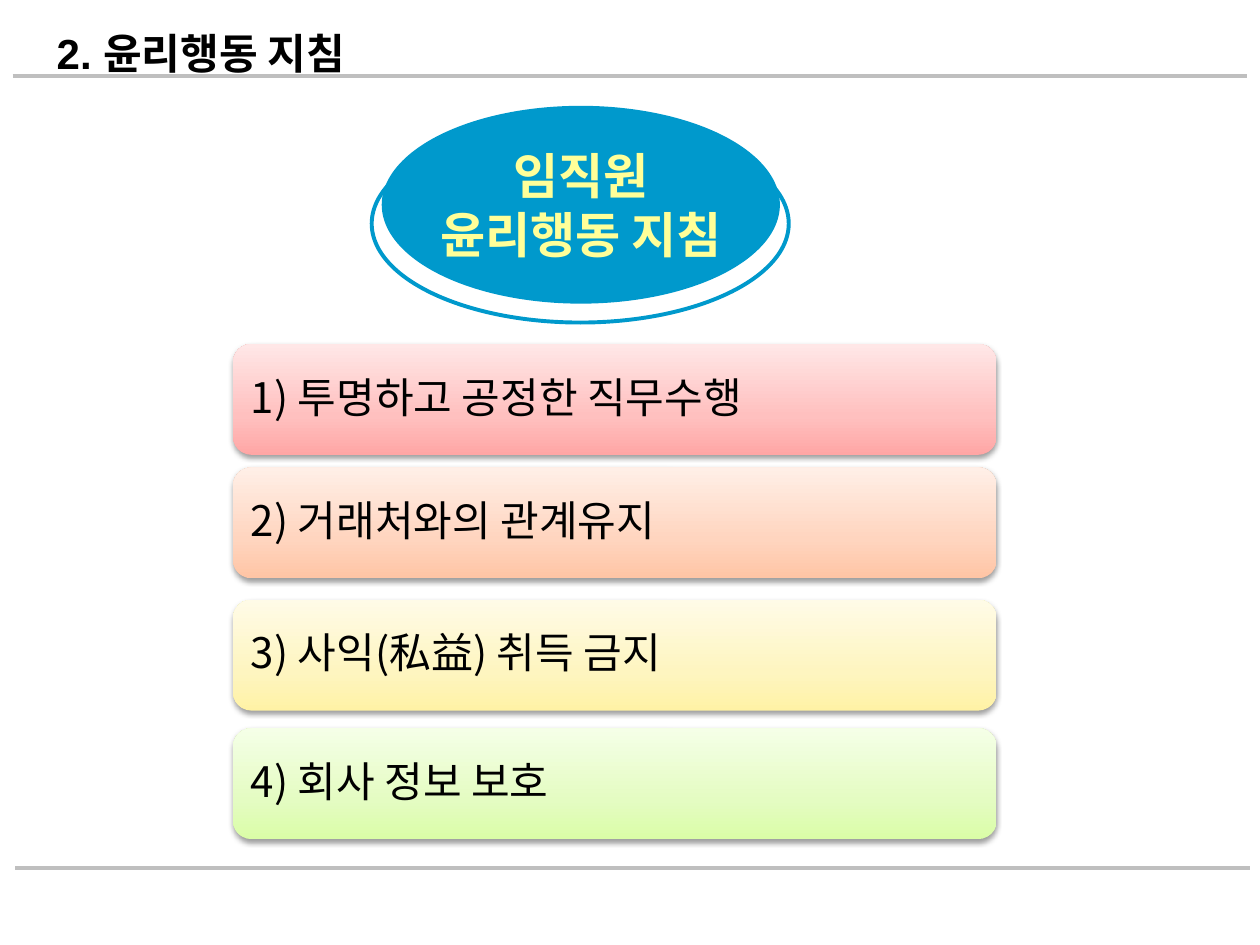
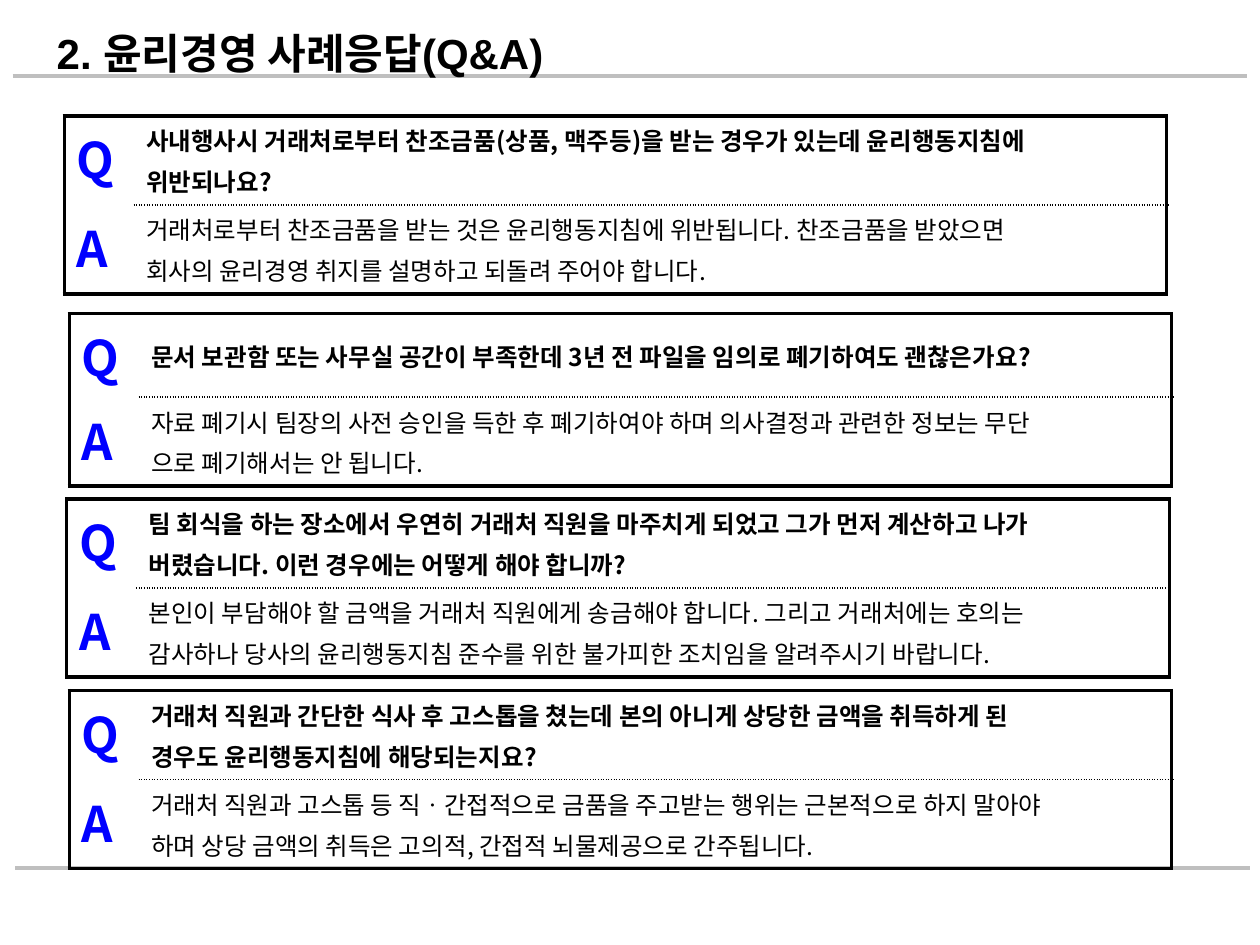
from dataclasses import dataclass

from lxml.etree import SubElement
from pptx import Presentation
from pptx.dml.color import RGBColor
from pptx.enum.shapes import MSO_CONNECTOR, MSO_SHAPE as Preset
from pptx.enum.text import MSO_ANCHOR as Anchor, MSO_AUTO_SIZE, PP_ALIGN as Align
from pptx.oxml.ns import qn
from pptx.util import Inches, Pt

BLACK = RGBColor(0x00, 0x00, 0x00)
RULE_GRAY = RGBColor(0xBF, 0xBF, 0xBF)
OVAL_BLUE = RGBColor(0x00, 0x99, 0xCC)
OVAL_YELLOW = RGBColor(0xFF, 0xFF, 0x99)
LETTER_BLUE = RGBColor(0x00, 0x00, 0xFF)
REDS = (RGBColor(0xFF, 0xA6, 0xA5), RGBColor(0xFF, 0xC0, 0xBF), RGBColor(0xFF, 0xE7, 0xE7))
ORANGES = (RGBColor(0xFF, 0xC5, 0xA5), RGBColor(0xFF, 0xD5, 0xBF), RGBColor(0xFF, 0xEF, 0xE7))
YELLOWS = (RGBColor(0xFF, 0xF2, 0xA5), RGBColor(0xFE, 0xF5, 0xC0), RGBColor(0xFF, 0xFB, 0xE7))
GREENS = (RGBColor(0xDA, 0xFD, 0xA7), RGBColor(0xE4, 0xFC, 0xC2), RGBColor(0xF5, 0xFF, 0xE7))

TITLE_FONT = "Arial"
KOREAN_FONT = "Noto Sans CJK KR"
SOLID = (2.25, "solid")
DOTTED = (1, "sysDot")


@dataclass
class Guideline:
    top: float
    text: str
    shades: tuple[RGBColor, RGBColor, RGBColor]


@dataclass
class CaseStudy:
    left: float
    top: float
    question: str
    answer: str
    answer_height: float = 0.58


GUIDELINES = [
    Guideline(2.73, "1) 투명하고 공정한 직무수행", REDS),
    Guideline(3.71, "2) 거래처와의 관계유지", ORANGES),
    Guideline(4.76, "3) 사익(私益) 취득 금지", YELLOWS),
    Guideline(5.78, "4) 회사 정보 보호", GREENS),
]

CASES = [
    CaseStudy(
        0.51, 0.92,
        "사내행사시 거래처로부터 찬조금품(상품, 맥주등)을 받는 경우가 있는데 윤리행동지침에\n위반되나요?",
        "거래처로부터 찬조금품을 받는 것은 윤리행동지침에 위반됩니다. 찬조금품을 받았으면\n"
        "회사의 윤리경영 취지를 설명하고 되돌려 주어야 합니다.",
    ),
    CaseStudy(
        0.55, 2.49,
        "문서 보관함 또는 사무실 공간이 부족한데 3년 전 파일을 임의로 폐기하여도 괜찮은가요?",
        "자료 폐기시 팀장의 사전 승인을 득한 후 폐기하여야 하며 의사결정과 관련한 정보는 무단\n"
        "으로 폐기해서는 안 됩니다.",
        0.6,
    ),
    CaseStudy(
        0.53, 3.96,
        "팀 회식을 하는 장소에서 우연히 거래처 직원을 마주치게 되었고 그가 먼저 계산하고 나가\n"
        "버렸습니다. 이런 경우에는 어떻게 해야 합니까?",
        "본인이 부담해야 할 금액을 거래처 직원에게 송금해야 합니다. 그리고 거래처에는 호의는\n"
        "감사하나 당사의 윤리행동지침 준수를 위한 불가피한 조치임을 알려주시기 바랍니다.",
    ),
    CaseStudy(
        0.55, 5.48,
        "거래처 직원과 간단한 식사 후 고스톱을 쳤는데 본의 아니게 상당한 금액을 취득하게 된\n"
        "경우도 윤리행동지침에 해당되는지요?",
        "거래처 직원과 고스톱 등 직ㆍ간접적으로 금품을 주고받는 행위는 근본적으로 하지 말아야\n"
        "하며 상당 금액의 취득은 고의적, 간접적 뇌물제공으로 간주됩니다.",
    ),
]


def style_paragraphs(frame, size: float, color: RGBColor, bold: bool = False,
                     name: str = KOREAN_FONT, align=Align.LEFT) -> None:
    for paragraph in frame.paragraphs:
        paragraph.alignment = align
        font = paragraph.font
        font.size, font.bold, font.name = Pt(size), bold, name
        font.color.rgb = color
        east_asian = SubElement(font._element, qn("a:ea"))
        east_asian.set("typeface", KOREAN_FONT)


def add_color(parent, color: RGBColor):
    node = SubElement(parent, qn("a:srgbClr"))
    node.set("val", str(color))
    return node


def add_rule(slide, left: float, top: float) -> None:
    rule = slide.shapes.add_connector(
        MSO_CONNECTOR.STRAIGHT, Inches(left), Inches(top), Inches(left + 9.8), Inches(top))
    rule.line.color.rgb = RULE_GRAY
    rule.line.width = Pt(2.25)
    SubElement(rule._element.spPr, qn("a:effectLst"))


def add_titled_slide(prs, heading: str):
    slide = prs.slides.add_slide(prs.slide_layouts[5])
    add_rule(slide, 0.1, 0.6)
    add_rule(slide, 0.12, 6.89)
    title = slide.shapes.title
    slide.shapes._spTree.append(title._element)
    title.left, title.top, title.width, title.height = map(Inches, (0.35, 0.13, 9.41, 0.55))
    frame = title.text_frame
    frame.text = heading
    frame.auto_size = MSO_AUTO_SIZE.NONE
    frame.vertical_anchor = Anchor.TOP
    frame.paragraphs[0].line_spacing = 1.1
    style_paragraphs(frame, 24, BLACK, True, TITLE_FONT)
    return slide


def add_shape(slide, preset, left: float, top: float, width: float, height: float):
    shape = slide.shapes.add_shape(
        preset, Inches(left), Inches(top), Inches(width), Inches(height))
    shape.shadow.inherit = False
    shape.fill.background()
    shape.line.fill.background()
    return shape


def shade_upward(shape, shades: tuple[RGBColor, ...]) -> None:
    shape.fill.gradient()
    shape.fill.gradient_angle = 90
    stops = shape._element.spPr.find(f"{qn('a:gradFill')}/{qn('a:gsLst')}")
    for stop in list(stops):
        stops.remove(stop)
    for position, shade in zip((0, 35, 100), shades):
        stop = SubElement(stops, qn("a:gs"))
        stop.set("pos", str(position * 1000))
        add_color(stop, shade)


def cast_shadow(shape) -> None:
    effects = shape._element.spPr.find(qn("a:effectLst"))
    shadow = SubElement(effects, qn("a:outerShdw"))
    shadow.set("blurRad", str(Pt(3.1)))
    shadow.set("dist", str(Pt(1.6)))
    shadow.set("dir", "5400000")
    shadow.set("rotWithShape", "0")
    alpha = SubElement(add_color(shadow, BLACK), qn("a:alpha"))
    alpha.set("val", "38000")


def add_guideline(slide, guideline: Guideline) -> None:
    bar = add_shape(slide, Preset.ROUNDED_RECTANGLE, 1.85, guideline.top, 6.06, 0.88)
    shade_upward(bar, guideline.shades)
    cast_shadow(bar)
    frame = bar.text_frame
    frame.text = guideline.text
    frame.word_wrap = True
    frame.vertical_anchor = Anchor.MIDDLE
    frame.paragraphs[0].line_spacing = 0.9
    style_paragraphs(frame, 24, BLACK)


def add_heading_oval(slide) -> None:
    ring = add_shape(slide, Preset.OVAL, 2.95, 0.99, 3.31, 1.57)
    ring.line.color.rgb = OVAL_BLUE
    ring.line.width = Pt(2.25)
    oval = add_shape(slide, Preset.OVAL, 3.03, 0.84, 3.16, 1.57)
    oval.fill.solid()
    oval.fill.fore_color.rgb = OVAL_BLUE
    frame = oval.text_frame
    frame.text = "임직원\n윤리행동 지침"
    frame.word_wrap = False
    frame.vertical_anchor = Anchor.MIDDLE
    style_paragraphs(frame, 28, OVAL_YELLOW, True, align=Align.CENTER)


def set_borders(cell, **edges: tuple[float, str]) -> None:
    properties = cell._tc.get_or_add_tcPr()
    for edge in "LRTB":
        border = SubElement(properties, qn(f"a:ln{edge}"))
        if edge not in edges:
            SubElement(border, qn("a:noFill"))
            continue
        width, dash = edges[edge]
        border.set("w", str(Pt(width)))
        add_color(SubElement(border, qn("a:solidFill")), BLACK)
        SubElement(border, qn("a:prstDash")).set("val", dash)
    cell.fill.background()


def fill_case_row(table, row: int, letter: str, text: str) -> None:
    letter_cell, text_cell = table.cell(row, 0), table.cell(row, 1)
    is_question = row == 0
    if is_question:
        set_borders(letter_cell, L=SOLID, T=SOLID)
        set_borders(text_cell, T=SOLID, R=SOLID, B=DOTTED)
    else:
        set_borders(letter_cell, L=SOLID, B=SOLID)
        set_borders(text_cell, T=DOTTED, R=SOLID, B=SOLID)
    letter_cell.text_frame.text = letter
    style_paragraphs(letter_cell.text_frame, 28, LETTER_BLUE, True)
    text_cell.text_frame.text = text
    text_cell.vertical_anchor = Anchor.MIDDLE
    for paragraph in text_cell.text_frame.paragraphs[1:]:
        paragraph.space_before = Pt(2.8)
    style_paragraphs(text_cell.text_frame, 14, BLACK, is_question)


def add_case(slide, case: CaseStudy) -> None:
    question_height = 0.58
    table = slide.shapes.add_table(
        2, 2, Inches(case.left), Inches(case.top), Inches(8.75),
        Inches(question_height + case.answer_height)).table
    table.first_row = table.horz_banding = False
    for column, width in zip(table.columns, (0.55, 8.2)):
        column.width = Inches(width)
    for row, height in zip(table.rows, (question_height, case.answer_height)):
        row.height = Inches(height)
    fill_case_row(table, 0, "Q", case.question)
    fill_case_row(table, 1, "A", case.answer)


def main() -> None:
    prs = Presentation()
    prs.slide_width, prs.slide_height = Inches(10), Inches(7.5)

    guide_slide = add_titled_slide(prs, "2. 윤리행동 지침")
    for guideline in GUIDELINES:
        add_guideline(guide_slide, guideline)
    add_heading_oval(guide_slide)

    case_slide = add_titled_slide(prs, "2. 윤리경영 사례응답(Q&A)")
    for case in CASES:
        add_case(case_slide, case)

    prs.save("out.pptx")


if __name__ == "__main__":
    main()
